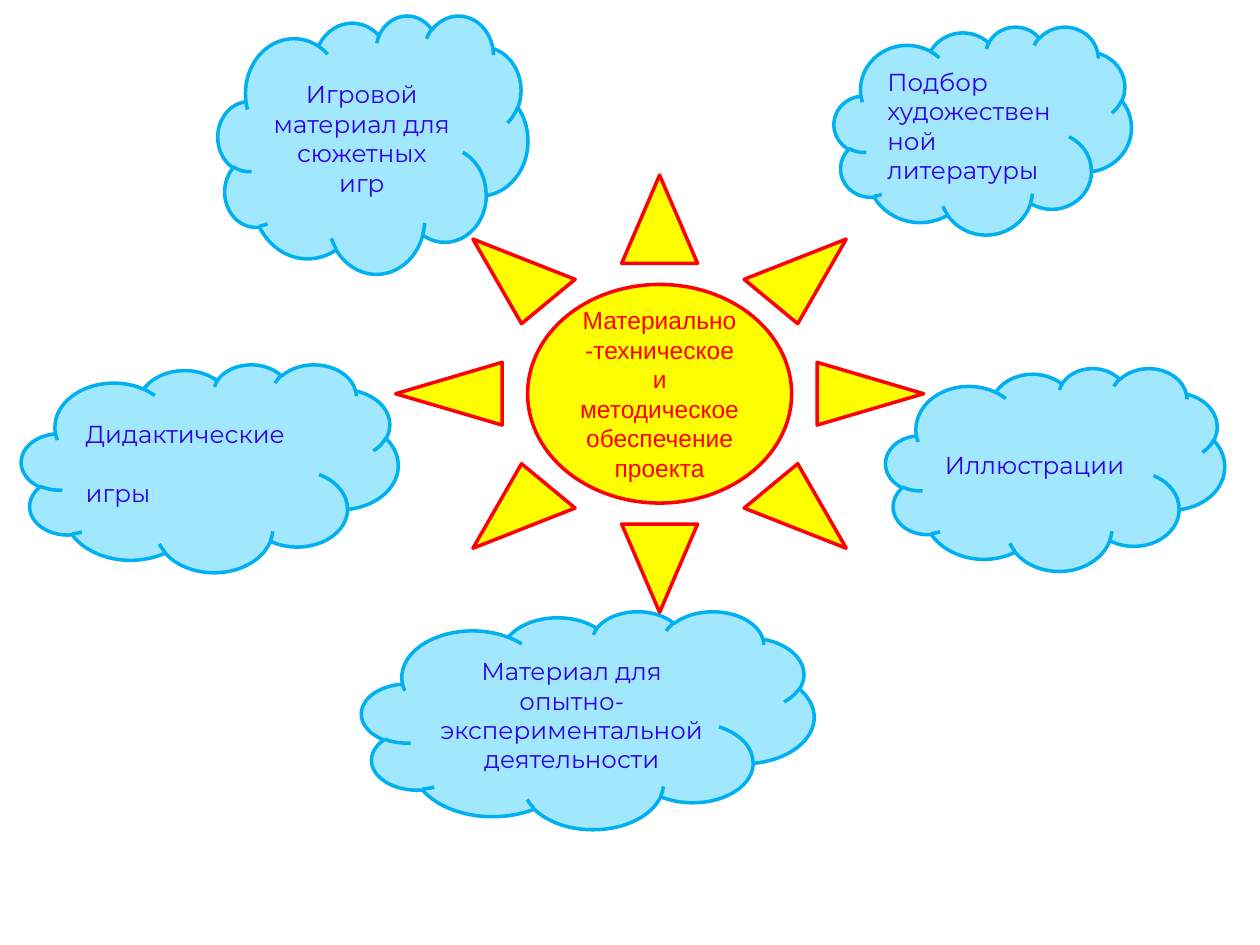
import pptx
import pptx.util
import pptx.dml.color
import pptx.enum.shapes
import pptx.enum.text

Inches, Pt = pptx.util.Inches, pptx.util.Pt
RGBColor = pptx.dml.color.RGBColor
MSO_SHAPE = pptx.enum.shapes.MSO_SHAPE
MSO_ANCHOR = pptx.enum.text.MSO_ANCHOR
PP_ALIGN = pptx.enum.text.PP_ALIGN

YELLOW = RGBColor(0xFF, 0xFF, 0x00)
RED = RGBColor(0xFF, 0x00, 0x00)
SKY = RGBColor(0xA1, 0xE7, 0xFD)
BLUE = RGBColor(0x00, 0xB0, 0xF0)
INDIGO = RGBColor(0x33, 0x03, 0xE3)


def write(tf, text, *, font, color, align, size=14, gap=17):
    """Fill a text frame, one paragraph per line, with a gap between them."""
    tf.word_wrap = True
    tf.vertical_anchor = MSO_ANCHOR.MIDDLE
    for i, line in enumerate(text.split("\n")):
        p = tf.add_paragraph() if i else tf.paragraphs[0]
        p.alignment = align
        if i:
            p.space_before = Pt(gap)
        r = p.add_run()
        r.text = line
        r.font.name = font
        r.font.size = Pt(size)
        r.font.color.rgb = color


def add_figure(s, kind, box, fill, line):
    sp = s.shapes.add_shape(kind, *[Inches(v) for v in box])
    sp.shadow.inherit = False
    sp.fill.solid()
    sp.fill.fore_color.rgb = fill
    sp.line.color.rgb = line
    sp.line.width = Pt(2)
    return sp


prs = pptx.Presentation()
prs.slide_width, prs.slide_height = Inches(10), Inches(7.5)
s = prs.slides.add_slide(prs.slide_layouts[6])

sun = add_figure(s, MSO_SHAPE.SUN, (3.14, 1.39, 4.19, 3.47), YELLOW, RED)
write(sun.text_frame, "Материально-техническое и методическое обеспечение проекта",
      font="Arial", color=RED, align=PP_ALIGN.CENTER)

clouds = [
    ("Игровой материал для сюжетных игр", (1.73, 0.12, 2.46, 2.05), PP_ALIGN.CENTER),
    ("Подбор художественной литературы", (6.62, 0.21, 2.36, 1.65), PP_ALIGN.LEFT),
    ("Материал для опытно-экспериментальной деятельности",
     (2.87, 4.85, 3.59, 1.73), PP_ALIGN.CENTER),
    ("Дидактические\nигры", (0.17, 2.89, 2.99, 1.65), PP_ALIGN.LEFT),
    ("Иллюстрации", (7.03, 2.92, 2.69, 1.61), PP_ALIGN.LEFT),
]
for text, box, align in clouds:
    cloud = add_figure(s, MSO_SHAPE.CLOUD, box, SKY, BLUE)
    write(cloud.text_frame, text, font="Montserrat", color=INDIGO, align=align)

prs.save("out.pptx")
